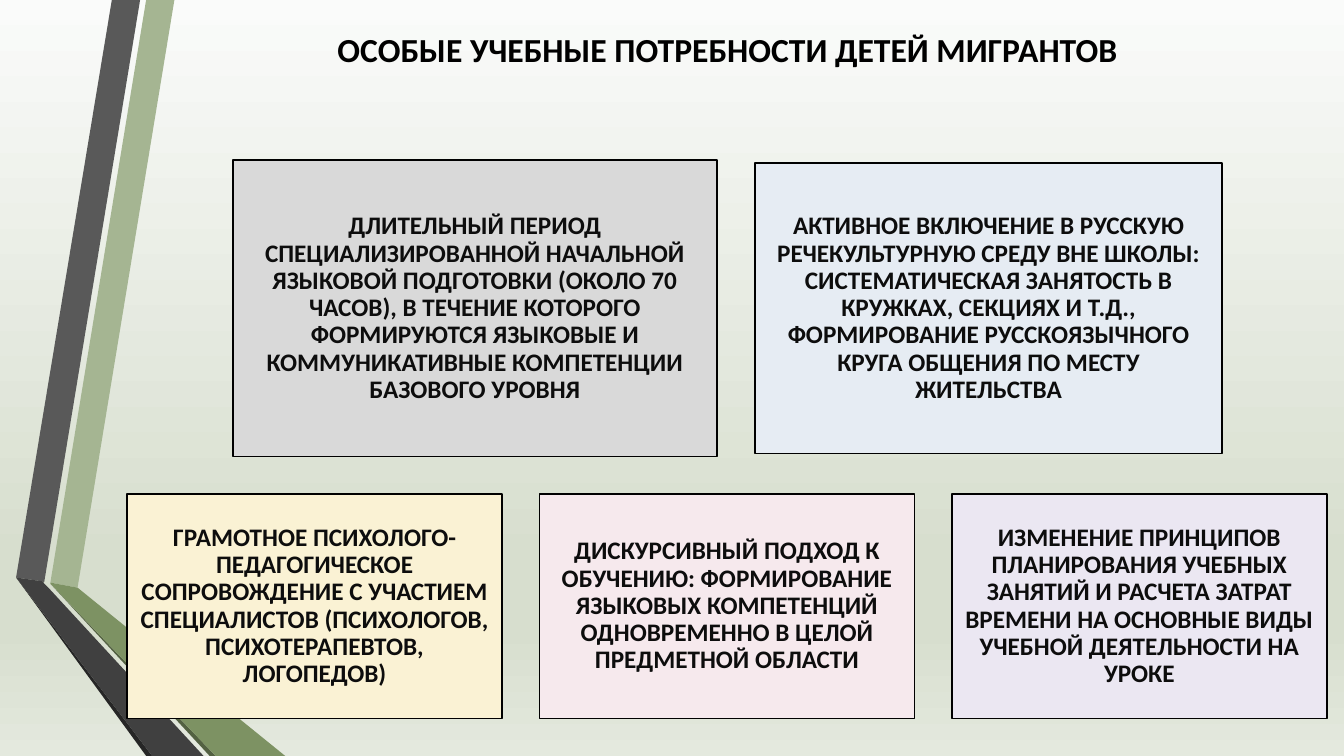
from lxml import etree
from pptx import Presentation
from pptx.dml.color import RGBColor
from pptx.enum.shapes import MSO_SHAPE
from pptx.enum.text import MSO_ANCHOR, PP_ALIGN
from pptx.oxml.ns import qn
from pptx.util import Pt

PX = 9144
RECTANGLE = MSO_SHAPE.RECTANGLE
MIDDLE = MSO_ANCHOR.MIDDLE
CENTER = PP_ALIGN.CENTER


def color(value):
    return RGBColor.from_string(value)


def write_text(shape, text, size, text_color, inset, line_spacing):
    frame = shape.text_frame
    margins = dict.fromkeys(("margin_left", "margin_top", "margin_right", "margin_bottom"), inset * PX)
    for name, value in {"word_wrap": True, "vertical_anchor": MIDDLE, **margins}.items():
        setattr(frame, name, value)
    paragraph = frame.paragraphs[0]
    paragraph.alignment = CENTER
    paragraph.line_spacing = line_spacing
    run = paragraph.add_run()
    run.text = text
    for name, value in {"name": "Calibri", "size": Pt(size), "bold": True}.items():
        setattr(run.font, name, value)
    run.font.color.rgb = color(text_color)


presentation = Presentation()
presentation.slide_width = 1333 * PX
presentation.slide_height = 750 * PX
slide = presentation.slides.add_slide(presentation.slide_layouts[6])

background = slide.background.fill
background.gradient()
background.gradient_angle = 270
stops = slide.element.find(".//" + qn("a:gsLst"))
for stop in list(stops):
    stops.remove(stop)
for percent, value in [(0, "FAFBFA"), (74, "D7DECE"), (83, "D7DECE"), (100, "E4E9DE")]:
    stop = etree.SubElement(stops, qn("a:gs"), pos=str(percent * 1000))
    etree.SubElement(stop, qn("a:srgbClr"), val=value)

ribbons = [
    ("A5B592", [(50, 578), (77, 583), (173, 0), (145, 0)]),
    ("595959", [(139, 0), (111, 0), (16, 573), (44, 577)]),
    ("262626", [(16, 573), (145, 750), (151, 750)]),
    ("536142", [(50, 579), (208, 750), (214, 750)]),
    ("7D9263", [(50, 579), (214, 750), (283, 750), (77, 583), (50, 578)]),
    ("404040", [(202, 750), (48, 583), (43, 578), (44, 577), (16, 573), (151, 750)]),
]
for fill, points in ribbons:
    builder = slide.shapes.build_freeform(*points[0], scale=PX)
    builder.add_line_segments(points[1:], close=True)
    ribbon = builder.convert_to_shape()
    ribbon.shadow.inherit = False
    ribbon.fill.solid()
    ribbon.fill.fore_color.rgb = color(fill)
    ribbon.line.fill.background()

title = slide.shapes.add_textbox(126 * PX, 15 * PX, 1191 * PX, 68 * PX)
write_text(title, "ОСОБЫЕ УЧЕБНЫЕ ПОТРЕБНОСТИ ДЕТЕЙ МИГРАНТОВ", 24, "000000", 5, 1.0)

needs = [
    ((231, 159, 480, 294), "D9D9D9",
     "ДЛИТЕЛЬНЫЙ ПЕРИОД СПЕЦИАЛИЗИРОВАННОЙ НАЧАЛЬНОЙ ЯЗЫКОВОЙ ПОДГОТОВКИ (ОКОЛО 70 ЧАСОВ), "
     "В ТЕЧЕНИЕ КОТОРОГО ФОРМИРУЮТСЯ ЯЗЫКОВЫЕ И КОММУНИКАТИВНЫЕ КОМПЕТЕНЦИИ БАЗОВОГО УРОВНЯ"),
    ((749, 162, 463, 288), "E6ECF3",
     "АКТИВНОЕ ВКЛЮЧЕНИЕ В РУССКУЮ РЕЧЕКУЛЬТУРНУЮ СРЕДУ ВНЕ ШКОЛЫ: СИСТЕМАТИЧЕСКАЯ ЗАНЯТОСТЬ "
     "В КРУЖКАХ, СЕКЦИЯХ И Т.Д., ФОРМИРОВАНИЕ РУССКОЯЗЫЧНОГО КРУГА ОБЩЕНИЯ ПО МЕСТУ ЖИТЕЛЬСТВА"),
]
bottom_row = [
    ("FAF2D4",
     "ГРАМОТНОЕ ПСИХОЛОГО-ПЕДАГОГИЧЕСКОЕ СОПРОВОЖДЕНИЕ С УЧАСТИЕМ СПЕЦИАЛИСТОВ "
     "(ПСИХОЛОГОВ, ПСИХОТЕРАПЕВТОВ, ЛОГОПЕДОВ)"),
    ("F6E9ED",
     "ДИСКУРСИВНЫЙ ПОДХОД К ОБУЧЕНИЮ: ФОРМИРОВАНИЕ ЯЗЫКОВЫХ КОМПЕТЕНЦИЙ "
     "ОДНОВРЕМЕННО В ЦЕЛОЙ ПРЕДМЕТНОЙ ОБЛАСТИ"),
    ("EBE7F2",
     "ИЗМЕНЕНИЕ ПРИНЦИПОВ ПЛАНИРОВАНИЯ УЧЕБНЫХ ЗАНЯТИЙ И РАСЧЕТА ЗАТРАТ ВРЕМЕНИ "
     "НА ОСНОВНЫЕ ВИДЫ УЧЕБНОЙ ДЕЯТЕЛЬНОСТИ НА УРОКЕ"),
]
for column, (fill, text) in enumerate(bottom_row):
    needs.append(((126 + column * 409, 490, 372, 223), fill, text))

for box, fill, text in needs:
    card = slide.shapes.add_shape(RECTANGLE, *(length * PX for length in box))
    card.shadow.inherit = False
    card.fill.solid()
    card.fill.fore_color.rgb = color(fill)
    card.line.color.rgb = color("000000")
    card.line.width = Pt(1.25)
    write_text(card, text, 18, "0D0D0D", 7, 0.9)

presentation.save("out.pptx")
